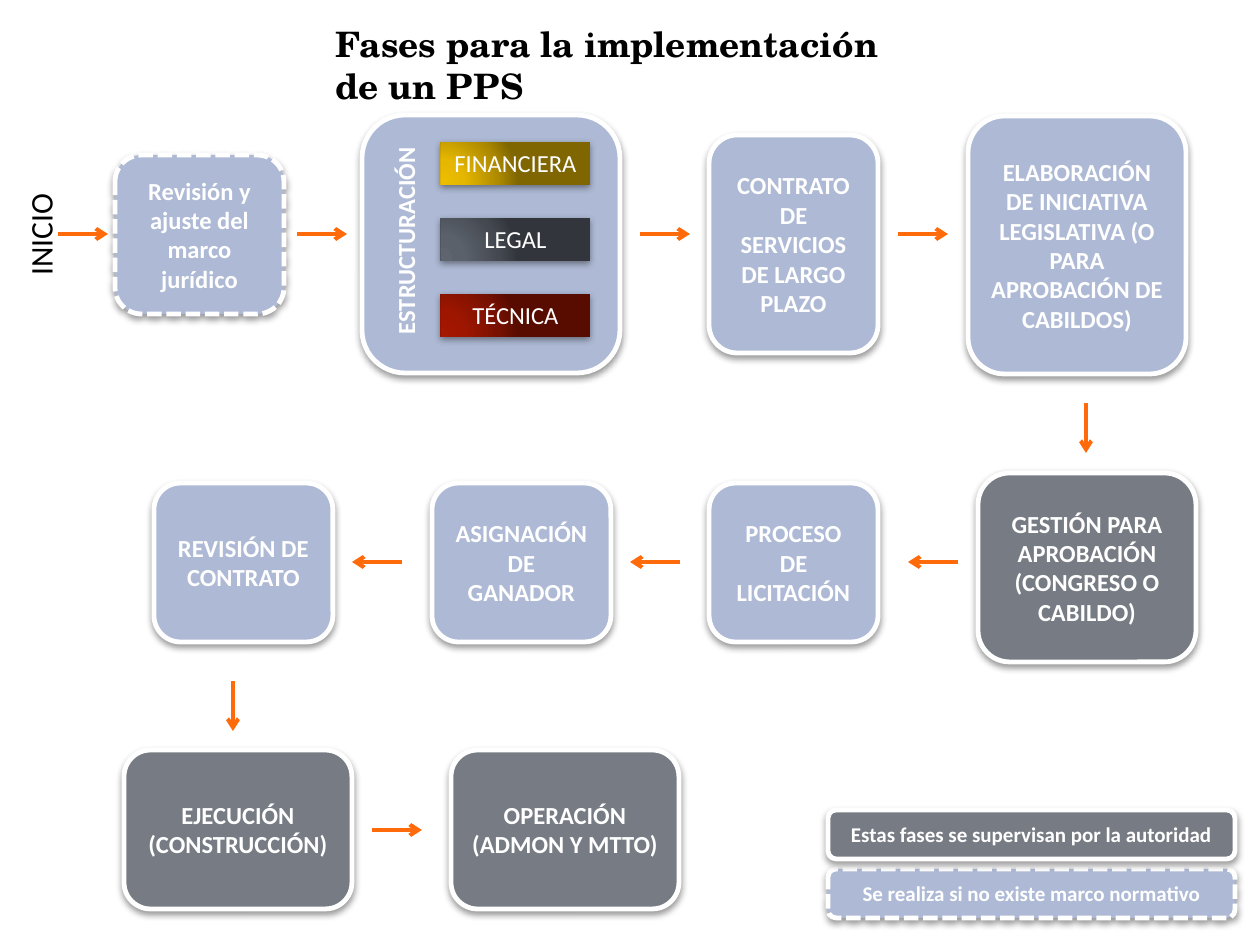
from dataclasses import dataclass

from lxml.etree import SubElement
from pptx import Presentation
from pptx.dml.color import RGBColor
from pptx.enum.dml import MSO_LINE
from pptx.enum.shapes import MSO_CONNECTOR, MSO_SHAPE
from pptx.enum.text import MSO_ANCHOR, PP_ALIGN
from pptx.oxml import parse_xml
from pptx.oxml.ns import nsdecls, qn
from pptx.util import Pt

PX = 914400 / 126


@dataclass(frozen=True)
class Theme:
    blue: str = "AEBAD5"
    gray: str = "777C84"
    white: str = "FFFFFF"
    black: str = "000000"
    orange: str = "FF6B0A"
    gold: tuple = ("EDBE00", "E5B700", "AC8900", "7F6600")
    slate: tuple = ("5E656F", "5B616B", "444951", "32363C")
    red: tuple = ("A41700", "9F1600", "771100", "580C00")
    body_font: str = "Calibri"
    title_font: str = "TeX Gyre Schola"
    title: int = 20
    start: int = 18
    body: int = 14
    legend: int = 12


theme = Theme()
deck = Presentation()
deck.slide_width, deck.slide_height = round(1260 * PX), round(945 * PX)
slide = deck.slides.add_slide(deck.slide_layouts[6])


def write(shape, text, size, color, bold=True, font=theme.body_font, align=PP_ALIGN.CENTER, wrap=True):
    frame = shape.text_frame
    frame.text = text
    frame.word_wrap = wrap
    for para in frame.paragraphs:
        para.alignment = align
        for span in para.runs:
            span.font.name, span.font.size, span.font.bold = font, Pt(size), bold
            span.font.color.rgb = RGBColor.from_string(color)


def add_panel(kind, frame, opacity, distance):
    """Add a shape with a soft shadow falling straight down; distance in points."""
    shape = slide.shapes.add_shape(kind, *(round(n * PX) for n in frame))
    shape.shadow.inherit = False
    effects = shape._element.spPr.find(qn("a:effectLst"))
    shadow = SubElement(effects, qn("a:outerShdw"), blurRad=str(Pt(4)), dist=str(Pt(distance)),
                        dir="5400000", rotWithShape="0")
    shade = SubElement(shadow, qn("a:srgbClr"), val=theme.black)
    SubElement(shade, qn("a:alpha"), val=str(opacity * 1000))
    return shape


# Phases and legend: text, (left, top, width, height), fill, dashed, text size
phases = [
    ("Revisión y ajuste del marco jurídico", (115, 155, 169, 159), theme.blue, True, theme.body),
    ("", (362, 115, 258, 258), theme.blue, False, theme.body),
    ("CONTRATO DE SERVICIOS DE LARGO PLAZO", (709, 135, 169, 218), theme.blue, False, theme.body),
    ("ELABORACIÓN DE INICIATIVA LEGISLATIVA (O PARA APROBACIÓN DE CABILDOS)",
     (968, 116, 218, 258), theme.blue, False, theme.body),
    ("GESTIÓN PARA APROBACIÓN (CONGRESO O CABILDO)", (978, 473, 218, 189), theme.gray, False, theme.body),
    ("PROCESO DE LICITACIÓN", (709, 483, 169, 159), theme.blue, False, theme.body),
    ("ASIGNACIÓN DE GANADOR", (432, 483, 179, 159), theme.blue, False, theme.body),
    ("REVISIÓN DE CONTRATO", (154, 483, 179, 159), theme.blue, False, theme.body),
    ("EJECUCIÓN (CONSTRUCCIÓN)", (124, 750, 228, 159), theme.gray, False, theme.body),
    ("OPERACIÓN\n(ADMON Y MTTO)", (451, 750, 228, 159), theme.gray, False, theme.body),
    ("Se realiza si no existe marco normativo", (828, 869, 407, 49), theme.blue, True, theme.legend),
    ("Estas fases se supervisan por la autoridad", (828, 810, 407, 49), theme.gray, False, theme.legend),
]
for text, frame, fill, dashed, size in phases:
    phase = add_panel(MSO_SHAPE.ROUNDED_RECTANGLE, frame, 40, 2)
    phase.fill.solid()
    phase.fill.fore_color.rgb = RGBColor.from_string(fill)
    phase.line.color.rgb = RGBColor.from_string(theme.white)
    phase.line.width = Pt(2.75)
    if dashed:
        phase.line.dash_style = MSO_LINE.SQUARE_DOT
    if text:
        phase.text_frame.vertical_anchor = MSO_ANCHOR.MIDDLE
        write(phase, text, size, theme.white)

# Parts of the structuring phase, with a radial gradient from the lower left
parts = [("FINANCIERA", theme.gold), ("LEGAL", theme.slate), ("TÉCNICA", theme.red)]
for row, (text, colors) in enumerate(parts):
    part = add_panel(MSO_SHAPE.RECTANGLE, (441, 142 + 76 * row, 149, 43), 42, 1.6)
    part.line.fill.background()
    stops = "".join(f'<a:gs pos="{stop}000"><a:srgbClr val="{color}"/></a:gs>'
                    for stop, color in zip((0, 30, 75, 100), colors))
    gradient = parse_xml(
        f'<a:gradFill {nsdecls("a")} rotWithShape="1"><a:gsLst>{stops}</a:gsLst><a:path path="circle">'
        '<a:fillToRect l="5000" t="100000" r="120000" b="10000"/></a:path></a:gradFill>')
    part._element.spPr.find(qn("a:prstGeom")).addnext(gradient)
    part.text_frame.vertical_anchor = MSO_ANCHOR.TOP
    write(part, text, theme.body, theme.white, bold=False, wrap=False)

# Free text: frame, rotation, then the text and its look
labels = [
    ((-14, 209, 108, 50), 270, "INICIO", theme.start, theme.black, False, theme.body_font),
    ((299, 218, 214, 43), 270, "ESTRUCTURACIÓN", theme.body, theme.white, True, theme.body_font),
    ((323, 16, 611, 55), 0, "Fases para la implementación de un PPS", theme.title, theme.black, True,
     theme.title_font),
]
for frame, rotation, text, size, color, bold, font in labels:
    box = slide.shapes.add_textbox(*(round(n * PX) for n in frame))
    box.rotation = rotation
    write(box, text, size, color, bold, font, PP_ALIGN.LEFT)

# Arrows: start point and direction, all of one length
ARROW = 50
arrows = [(left, 234, 1, 0) for left in (58, 297, 640, 898)]
arrows += [(left, 562, -1, 0) for left in (958, 680, 402)]
arrows += [(1086, 403, 0, 1), (233, 681, 0, 1), (372, 830, 1, 0)]
for left, top, across, down in arrows:
    ends = (left, top, left + ARROW * across, top + ARROW * down)
    arrow = slide.shapes.add_connector(MSO_CONNECTOR.STRAIGHT, *(round(n * PX) for n in ends))
    arrow.line.color.rgb = RGBColor.from_string(theme.orange)
    arrow.line.width = Pt(2.25)
    SubElement(arrow.line._get_or_add_ln(), qn("a:tailEnd"), type="arrow")
    SubElement(arrow._element.spPr, qn("a:effectLst"))

deck.save("out.pptx")
